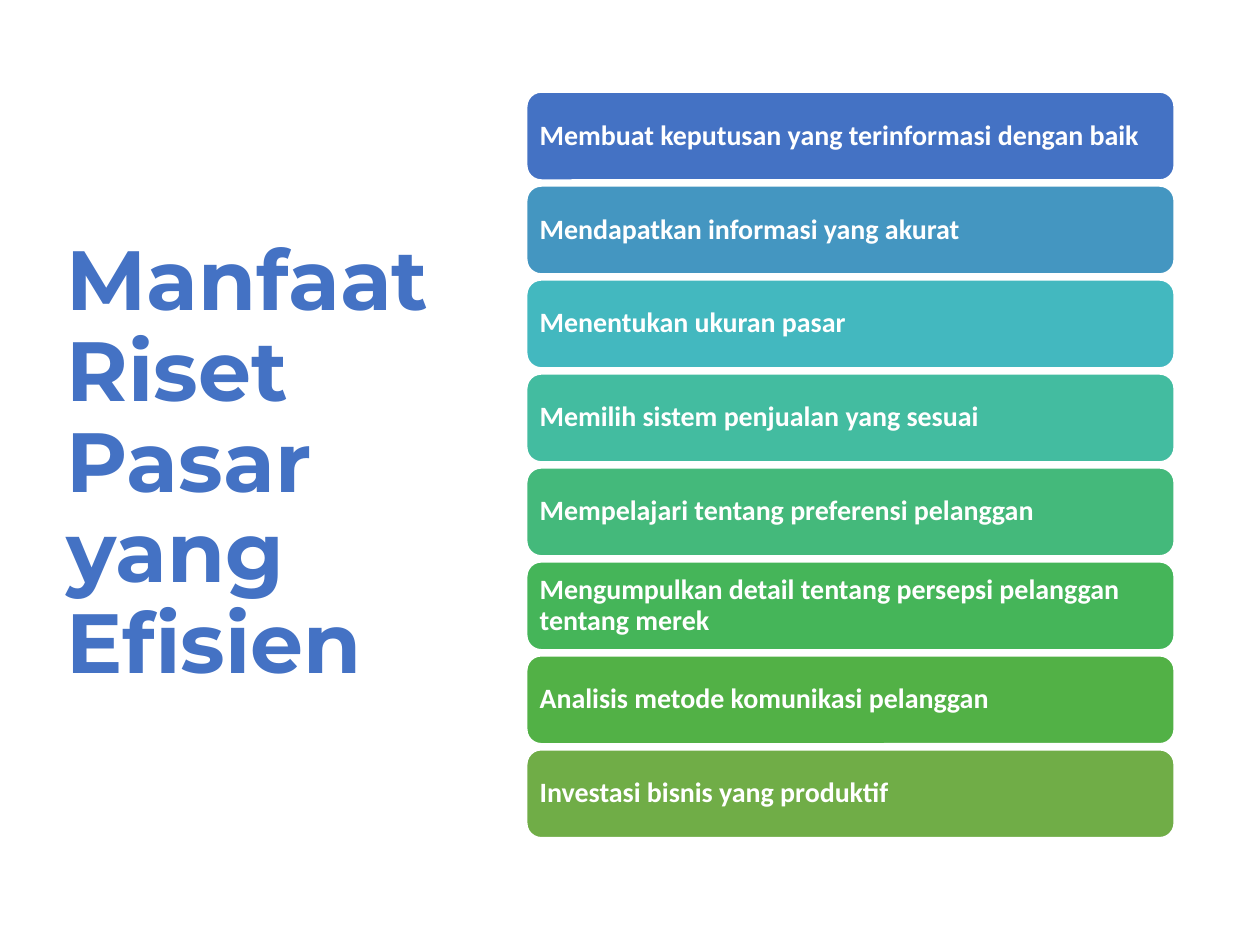
from dataclasses import dataclass

from pptx import Presentation
from pptx.dml.color import RGBColor
from pptx.enum.shapes import MSO_SHAPE
from pptx.enum.text import MSO_ANCHOR, PP_ALIGN
from pptx.shapes.base import BaseShape
from pptx.slide import Slide
from pptx.util import Inches, Pt

ROUNDED = MSO_SHAPE.ROUNDED_RECTANGLE
MIDDLE = MSO_ANCHOR.MIDDLE
LEFT = PP_ALIGN.LEFT

COLORS = {
    "title": "4472C4",
    "white": "FFFFFF",
    "blue": "4472C4",
    "sky": "4496C1",
    "teal": "43B8BF",
    "sea": "43BCA0",
    "mint": "44B97B",
    "green": "45B559",
    "leaf": "52B146",
    "olive": "70AD47",
}


@dataclass(frozen=True)
class Grid:
    """A column of equal rows, in inches."""
    left: float
    top: float
    width: float
    height: float
    rows: int
    row_height: float

    def row_top(self, row: int) -> float:
        pitch = (self.height - self.row_height) / (self.rows - 1)
        return self.top + row * pitch


@dataclass(frozen=True)
class Benefit:
    text: str
    color: str


BENEFITS = [
    Benefit("Membuat keputusan yang terinformasi dengan baik", "blue"),
    Benefit("Mendapatkan informasi yang akurat", "sky"),
    Benefit("Menentukan ukuran pasar", "teal"),
    Benefit("Memilih sistem penjualan yang sesuai", "sea"),
    Benefit("Mempelajari tentang preferensi pelanggan", "mint"),
    Benefit("Mengumpulkan detail tentang persepsi pelanggan tentang merek", "green"),
    Benefit("Analisis metode komunikasi pelanggan", "leaf"),
    Benefit("Investasi bisnis yang produktif", "olive"),
]
BARS = Grid(left=4.18, top=0.73, width=5.14, height=5.92,
            rows=len(BENEFITS), row_height=0.7)


def rgb(name: str) -> RGBColor:
    return RGBColor.from_string(COLORS[name])


def write_text(box: BaseShape, text: str, *, font: str, size: float,
               color: str, inset: float) -> None:
    """Fill a shape with one bold, left-aligned, vertically centred paragraph."""
    frame = box.text_frame
    frame.word_wrap = True
    frame.vertical_anchor = MIDDLE
    frame.margin_left = frame.margin_right = Inches(inset)
    frame.margin_top = frame.margin_bottom = Inches(inset)
    para = frame.paragraphs[0]
    para.alignment = LEFT
    para.line_spacing = 0.9
    span = para.add_run()
    span.text = text
    span.font.name = font
    span.font.size = Pt(size)
    span.font.bold = True
    span.font.color.rgb = rgb(color)


def draw_title(page: Slide, text: str) -> None:
    box = page.shapes.add_textbox(Inches(0.43), Inches(0.68),
                                  Inches(3.12), Inches(6.02))
    write_text(box, text, font="Montserrat", size=48, color="title", inset=0.1)


def draw_benefit(page: Slide, grid: Grid, row: int, benefit: Benefit) -> None:
    bar = page.shapes.add_shape(ROUNDED, Inches(grid.left), Inches(grid.row_top(row)),
                                Inches(grid.width), Inches(grid.row_height))
    bar.shadow.inherit = False
    bar.fill.solid()
    bar.fill.fore_color.rgb = rgb(benefit.color)
    bar.line.color.rgb = rgb("white")
    bar.line.width = Pt(1)
    write_text(bar, benefit.text, font="Calibri", size=16, color="white", inset=0.07)


def main() -> None:
    deck = Presentation()
    deck.slide_width, deck.slide_height = Inches(10), Inches(7.5)
    page = deck.slides.add_slide(deck.slide_layouts[6])

    # Title on the left
    draw_title(page, "Manfaat Riset Pasar yang Efisien")

    # Stack of benefits on the right
    for row, benefit in enumerate(BENEFITS):
        draw_benefit(page, BARS, row, benefit)

    deck.save("out.pptx")


if __name__ == "__main__":
    main()
